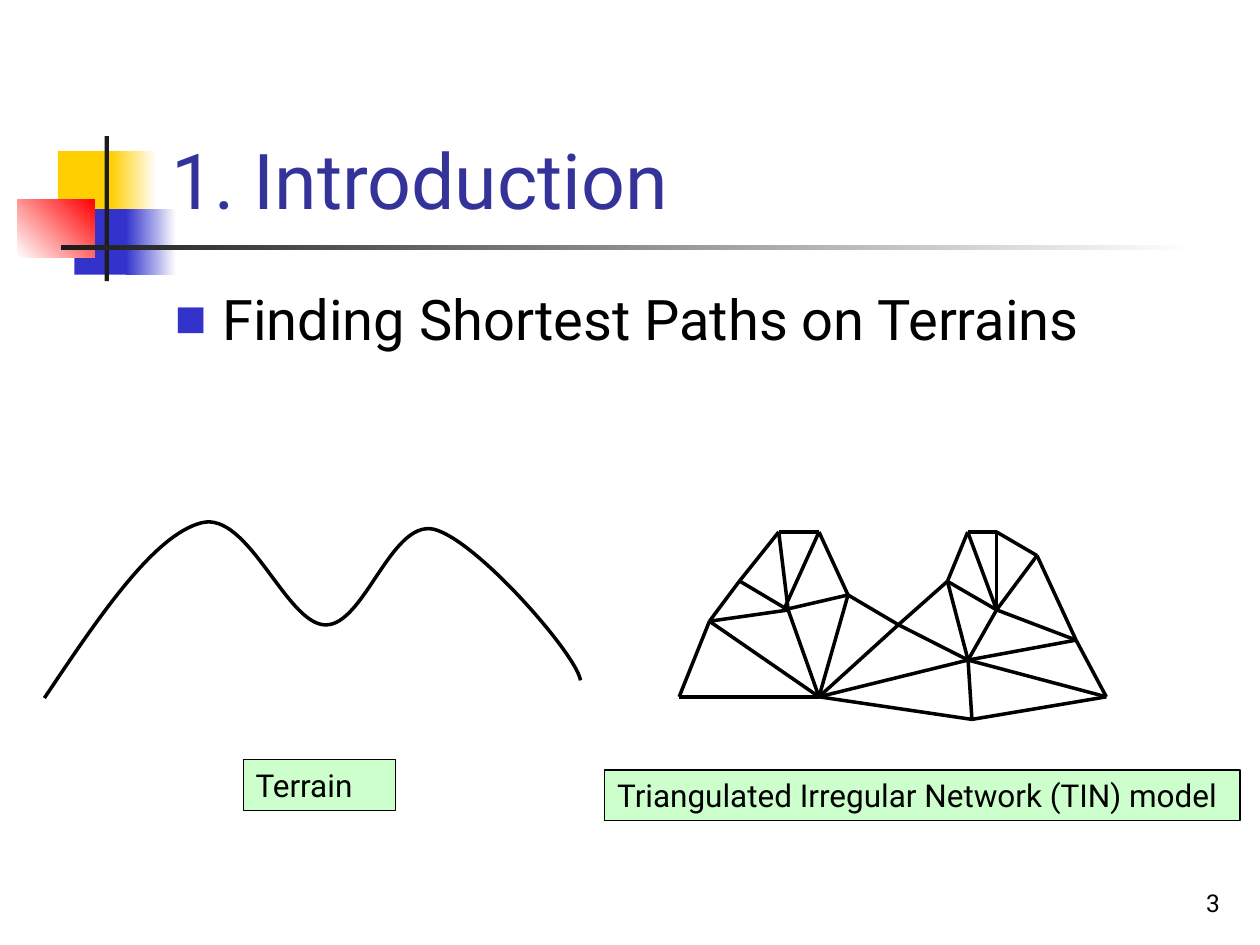
from lxml import etree
from pptx import Presentation
from pptx.dml.color import RGBColor
from pptx.enum.shapes import MSO_CONNECTOR, MSO_SHAPE
from pptx.enum.text import MSO_ANCHOR, MSO_AUTO_SIZE, PP_ALIGN
from pptx.oxml.ns import qn
from pptx.util import Pt

RECT, STRAIGHT = MSO_SHAPE.RECTANGLE, MSO_CONNECTOR.STRAIGHT
TOP, BOTTOM = MSO_ANCHOR.TOP, MSO_ANCHOR.BOTTOM
LEFT, RIGHT = PP_ALIGN.LEFT, PP_ALIGN.RIGHT
FONT, BLACK, BLUE, YELLOW, DARK = "Roboto", "000000", "3333CC", "FFCF01", "1C1C1C"
WHITE, RED, NAVY, GREEN = "FFFFFF", "FF0000", "333399", "CCFFCC"

# Title decoration: left, top, width, height, colours (two make a gradient), angle
DECORATION = [
    (33.1, 86.4, 34.6, 37.4, [YELLOW], 0),
    (63.4, 86.4, 25.9, 37.4, [YELLOW, WHITE], 0),
    (42.5, 119.5, 33.1, 37.4, [BLUE], 0),
    (72, 119.5, 28.8, 37.4, [BLUE, WHITE], 0),
    (10, 113.8, 44, 33.1, [WHITE, RED], 45),
    (59.8, 77.8, 2.5, 82.8, [DARK], 0),
    (34.6, 140.2, 648, 2.5, [DARK, WHITE], 0),
]

# Labels: left, top, width, text
LABELS = [
    (139, 434.2, 87.2, "Terrain"),
    (345.6, 440, 363, "Triangulated Irregular Network (TIN) model"),
]

# Terrain profile: start point, then three points for each Bezier segment
PROFILE = [
    (25.4, 398.9),
    (56.7, 352.1), (87.8, 306), (115, 298.8),
    (141.8, 291.6), (163.4, 356.4), (185.8, 357.1),
    (208.1, 357.8), (223.2, 297.4), (247.7, 302.4),
    (272.2, 308.2), (329.8, 374.4), (331.7, 388.8),
]

# Triangulated network: vertices, and the edges between them
VERTICES = {
    "A": (445, 304), "B": (468, 304), "C": (422.6, 332), "D": (450.4, 348.6),
    "E": (484.6, 340), "F": (513.4, 357), "G": (541.4, 332.2), "H": (553, 304),
    "I": (569.5, 304), "J": (569.5, 348.5), "K": (592.6, 317.5),
    "L": (614.9, 365.8), "M": (632.2, 398.2), "N": (553.2, 377.2),
    "O": (555.4, 411.1), "P": (405.4, 355), "Q": (388.1, 398.2),
    "R": (468, 398.2), "S": (447.9, 348.5),
}
EDGES = ("AC AD CD AB SB BE SE EF FG GN GH HJ HI JI IK JK KL JL GJ JN NL LM "
         "NM FN CP PD PQ PR QR DR RF RN RO OM NO RE").split()


def rgb(color):
    return RGBColor.from_string(color)


def set_line(shape, width):
    shape.line.color.rgb = rgb(BLACK)
    shape.line.width = Pt(width)


def add_text(s, box, text, size, color=BLACK, anchor=TOP, align=LEFT):
    sp = s.shapes.add_textbox(*map(Pt, box))
    tf = sp.text_frame
    tf.word_wrap = True
    tf.vertical_anchor = anchor
    p = tf.paragraphs[0]
    p.alignment = align
    r = p.add_run()
    r.text = text
    r.font.name, r.font.size, r.font.color.rgb = FONT, Pt(size), rgb(color)
    return sp


def add_bullet(p, indent):
    pPr = p._p.get_or_add_pPr()
    pPr.set("marL", str(Pt(indent)))
    pPr.set("indent", str(-Pt(indent)))
    color = etree.SubElement(pPr, qn("a:buClr"))
    etree.SubElement(color, qn("a:srgbClr"), val=BLUE)
    etree.SubElement(pPr, qn("a:buSzPct"), val="60000")
    etree.SubElement(pPr, qn("a:buFont"), typeface=FONT)
    etree.SubElement(pPr, qn("a:buChar"), char="■")


def add_decoration(s):
    for *box, colors, angle in DECORATION:
        sp = s.shapes.add_shape(RECT, *map(Pt, box))
        sp.shadow.inherit = False
        sp.line.fill.background()
        if len(colors) == 1:
            sp.fill.solid()
            sp.fill.fore_color.rgb = rgb(colors[0])
        else:
            sp.fill.gradient()
            sp.fill.gradient_angle = angle
            for stop, color in zip(sp.fill.gradient_stops, colors):
                stop.color.rgb = rgb(color)


def add_curve(s, points):
    start, *rest = [(Pt(x), Pt(y)) for x, y in points]
    builder = s.shapes.build_freeform(*start)
    builder.add_line_segments(rest, close=False)
    sp = builder.convert_to_shape()
    # Turn every three straight segments into one Bezier segment
    segments = list(sp._element.iter(qn("a:lnTo")))
    for i in range(0, len(segments), 3):
        bezier = etree.Element(qn("a:cubicBezTo"))
        segments[i].addprevious(bezier)
        for segment in segments[i:i + 3]:
            bezier.append(segment[0])
            segment.getparent().remove(segment)
    sp.shadow.inherit = False
    sp.fill.background()
    set_line(sp, 2)


def add_network(s):
    group = s.shapes.add_group_shape()
    for start, end in EDGES:
        ends = VERTICES[start] + VERTICES[end]
        edge = group.shapes.add_connector(STRAIGHT, *map(Pt, ends))
        set_line(edge, 2)
        etree.SubElement(edge._element.spPr, qn("a:effectLst"))


def main():
    prs = Presentation()
    prs.slide_width, prs.slide_height = Pt(720), Pt(540)
    s = prs.slides.add_slide(prs.slide_layouts[6])

    add_decoration(s)

    # Title, bullet and slide number
    add_text(s, (90.7, 16.6, 613.4, 115.2), "1. Introduction", 44, NAVY, BOTTOM)
    body = add_text(s, (92.9, 159.1, 612, 77), "Finding Shortest Paths on Terrains", 32)
    p = body.text_frame.paragraphs[0]
    p.space_before = Pt(6.4)
    add_bullet(p, 27)
    add_text(s, (554.4, 491.8, 149.8, 36), "3", 14, BLACK, BOTTOM, RIGHT)

    # Terrain and its model, with labels
    add_curve(s, PROFILE)
    for left, top, width, text in LABELS:
        sp = add_text(s, (left, top, width, 28.8), text, 18)
        sp.text_frame.auto_size = MSO_AUTO_SIZE.SHAPE_TO_FIT_TEXT
        sp.fill.solid()
        sp.fill.fore_color.rgb = rgb(GREEN)
        set_line(sp, 0.75)
    add_network(s)

    prs.save("out.pptx")


if __name__ == "__main__":
    main()
